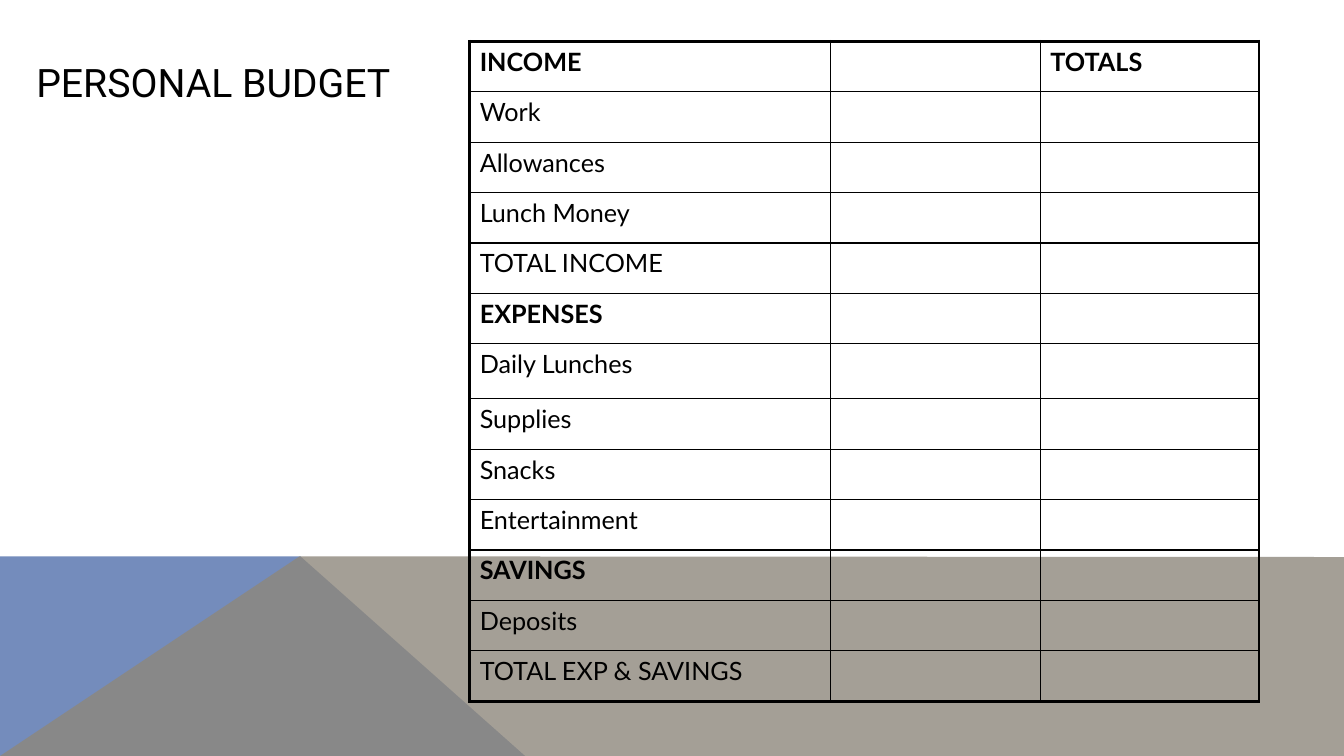
from typing import NamedTuple

from lxml import etree
from pptx import Presentation
from pptx.dml.color import RGBColor
from pptx.enum.text import MSO_ANCHOR, PP_ALIGN
from pptx.oxml.ns import qn
from pptx.util import Pt

LEFT, MIDDLE = PP_ALIGN.LEFT, MSO_ANCHOR.MIDDLE
TITLE_ONLY = 5
BLACK = "000000"
THIN, THICK = 1, 2.25
ROW_HEIGHT, LUNCHES_HEIGHT = 36, 39.4
COLUMN_WIDTHS = (257.8, 149.8, 156.2)


class Band(NamedTuple):
    points: tuple[tuple[float, float], ...]
    color: str
    opacity: int


class BudgetRow(NamedTuple):
    label: str
    total: str = ""
    bold: bool = False
    height: float = ROW_HEIGHT


BANDS = (
    Band(((0, 540), (0, 397.4), (214.6, 397.4), (375.1, 540)), "748CBC", 100),
    Band(((0, 540), (214, 397.4), (960, 397.9), (960, 540)), "8E887C", 80),
)

BUDGET = (
    BudgetRow("INCOME", "TOTALS", bold=True),
    BudgetRow("Work"),
    BudgetRow("Allowances"),
    BudgetRow("Lunch Money"),
    BudgetRow("TOTAL INCOME"),
    BudgetRow("EXPENSES", bold=True),
    BudgetRow("Daily Lunches", height=LUNCHES_HEIGHT),
    BudgetRow("Supplies"),
    BudgetRow("Snacks"),
    BudgetRow("Entertainment"),
    BudgetRow("SAVINGS", bold=True),
    BudgetRow("Deposits"),
    BudgetRow("TOTAL EXP & SAVINGS"),
)


def rgb(color: str) -> RGBColor:
    return RGBColor.from_string(color)


def style_text(paragraph, font_name: str, size: float, bold: bool = False) -> None:
    paragraph.alignment = LEFT
    font = paragraph.font
    font.name, font.size, font.bold = font_name, Pt(size), bold
    font.color.rgb = rgb(BLACK)


def draw_band(slide, band: Band) -> None:
    start, *corners = [(Pt(x), Pt(y)) for x, y in band.points]
    outline = slide.shapes.build_freeform(*start)
    outline.add_line_segments(corners, close=True)
    shape = outline.convert_to_shape()
    shape.shadow.inherit = False
    shape.line.fill.background()
    shape.fill.solid()
    shape.fill.fore_color.rgb = rgb(band.color)
    if band.opacity < 100:
        color = shape.element.spPr.find(qn("a:solidFill")).find(qn("a:srgbClr"))
        etree.SubElement(color, qn("a:alpha"), val=str(band.opacity * 1000))


def set_borders(cell, left: float, right: float, top: float, bottom: float) -> None:
    properties = cell._tc.get_or_add_tcPr()
    sides = {"a:lnL": left, "a:lnR": right, "a:lnT": top, "a:lnB": bottom}
    for index, (side, width) in enumerate(sides.items()):
        border = etree.Element(qn(side), w=str(Pt(width)))
        fill = etree.SubElement(border, qn("a:solidFill"))
        etree.SubElement(fill, qn("a:srgbClr"), val=BLACK)
        properties.insert(index, border)


def draw_budget(slide) -> None:
    last_row, last_column = len(BUDGET) - 1, len(COLUMN_WIDTHS) - 1
    budget = slide.shapes.add_table(
        len(BUDGET), len(COLUMN_WIDTHS), Pt(335.5), Pt(29.5),
        Pt(sum(COLUMN_WIDTHS)), Pt(sum(row.height for row in BUDGET)),
    ).table
    budget.first_row = budget.horz_banding = False
    for column, width in zip(budget.columns, COLUMN_WIDTHS):
        column.width = Pt(width)

    for r, row in enumerate(BUDGET):
        budget.rows[r].height = Pt(row.height)
        for c, text in enumerate((row.label, "", row.total)):
            cell = budget.cell(r, c)
            cell.text = text
            cell.fill.background()
            style_text(cell.text_frame.paragraphs[0], "Lato", 18, row.bold)
            set_borders(
                cell,
                left=THICK if c == 0 else THIN,
                right=THICK if c == last_column else THIN,
                top=THICK if r == 0 else THIN,
                bottom=THICK if r == last_row else THIN,
            )


def draw_title(slide) -> None:
    title = slide.shapes.title
    title.left, title.top = Pt(18.7), Pt(13.7)
    title.width, title.height = Pt(613.4), Pt(90)
    title.text_frame.text = "PERSONAL BUDGET"
    title.text_frame.vertical_anchor = MIDDLE
    style_text(title.text_frame.paragraphs[0], "Roboto", 28)


def main() -> None:
    presentation = Presentation()
    presentation.slide_width, presentation.slide_height = Pt(960), Pt(540)
    slide = presentation.slides.add_slide(presentation.slide_layouts[TITLE_ONLY])
    for band in BANDS:
        draw_band(slide, band)
    draw_title(slide)
    draw_budget(slide)
    presentation.save("out.pptx")


if __name__ == "__main__":
    main()
